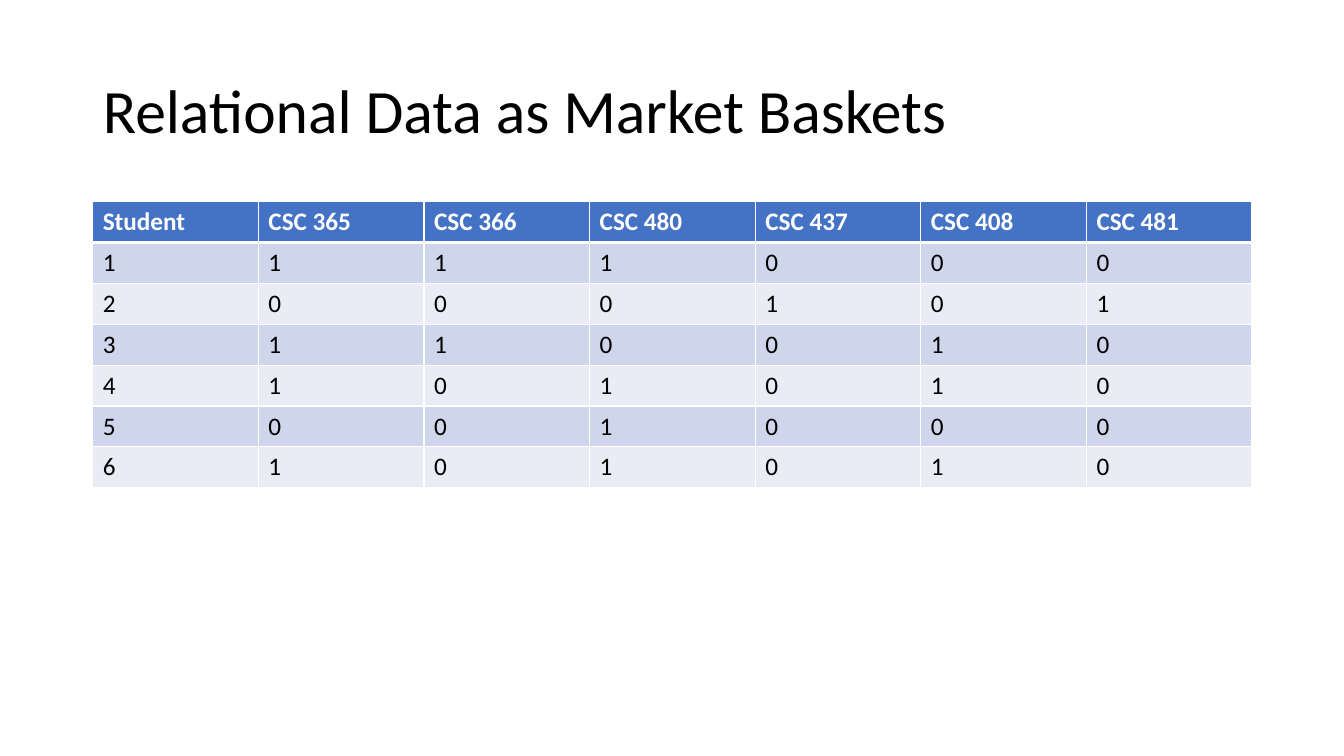
from dataclasses import dataclass

from lxml import etree
from pptx import Presentation
from pptx.dml.color import RGBColor
from pptx.enum.text import MSO_ANCHOR, PP_ALIGN
from pptx.oxml.ns import qn
from pptx.slide import Slide
from pptx.table import _Cell
from pptx.text.text import TextFrame
from pptx.util import Inches, Pt

LEFT = PP_ALIGN.LEFT
MIDDLE = MSO_ANCHOR.MIDDLE
FONT = "Calibri"
COLORS = {
    "ink": "000000",
    "white": "FFFFFF",
    "header": "4472C4",
    "odd_band": "CFD5EA",
    "even_band": "E9EBF5",
}
COURSES = ["CSC 365", "CSC 366", "CSC 480", "CSC 437", "CSC 408", "CSC 481"]


@dataclass
class Student:
    number: int
    enrolled: list[int]


STUDENTS = [
    Student(1, [1, 1, 1, 0, 0, 0]),
    Student(2, [0, 0, 0, 1, 0, 1]),
    Student(3, [1, 1, 0, 0, 1, 0]),
    Student(4, [1, 0, 1, 0, 1, 0]),
    Student(5, [0, 0, 1, 0, 0, 0]),
    Student(6, [1, 0, 1, 0, 1, 0]),
]


def color(name: str) -> RGBColor:
    return RGBColor.from_string(COLORS[name])


def write(frame: TextFrame, text: str, size: int, ink: str, bold: bool = False) -> None:
    frame.text = text
    font = frame.paragraphs[0].runs[0].font
    font.name = FONT
    font.size = Pt(size)
    font.bold = bold
    font.color.rgb = color(ink)


def draw_borders(cell: _Cell, row: int) -> None:
    widths = {"L": 1, "R": 1, "T": 3 if row == 1 else 1, "B": 3 if row == 0 else 1}
    properties = cell._tc.get_or_add_tcPr()
    for side, width in widths.items():
        border = etree.SubElement(properties, qn(f"a:ln{side}"), w=str(Pt(width)))
        fill = etree.SubElement(border, qn("a:solidFill"))
        etree.SubElement(fill, qn("a:srgbClr"), val=COLORS["white"])


def draw_title(slide: Slide) -> None:
    title = slide.shapes.title
    title.left, title.top = Inches(0.92), Inches(0.4)
    title.width, title.height = Inches(11.5), Inches(1.45)
    write(title.text_frame, "Relational Data as Market Baskets", 44, "ink")
    title.text_frame.vertical_anchor = MIDDLE
    heading = title.text_frame.paragraphs[0]
    heading.alignment = LEFT
    heading.line_spacing = 0.9


def draw_baskets(slide: Slide) -> None:
    rows = [["Student", *COURSES]]
    rows += [[str(value) for value in (s.number, *s.enrolled)] for s in STUDENTS]
    baskets = slide.shapes.add_table(
        len(rows), len(rows[0]), Inches(0.92), Inches(2), Inches(11.5), Inches(2.84)
    ).table
    for row, values in enumerate(rows):
        is_header = row == 0
        band = "header" if is_header else "odd_band" if row % 2 else "even_band"
        for column, value in enumerate(values):
            cell = baskets.cell(row, column)
            write(cell.text_frame, value, 18, "white" if is_header else "ink", is_header)
            draw_borders(cell, row)
            cell.fill.solid()
            cell.fill.fore_color.rgb = color(band)


def main() -> None:
    presentation = Presentation()
    presentation.slide_width = Inches(13.33)
    presentation.slide_height = Inches(7.5)
    slide = presentation.slides.add_slide(presentation.slide_layouts.get_by_name("Title Only"))
    draw_title(slide)
    draw_baskets(slide)
    presentation.save("out.pptx")


if __name__ == "__main__":
    main()
